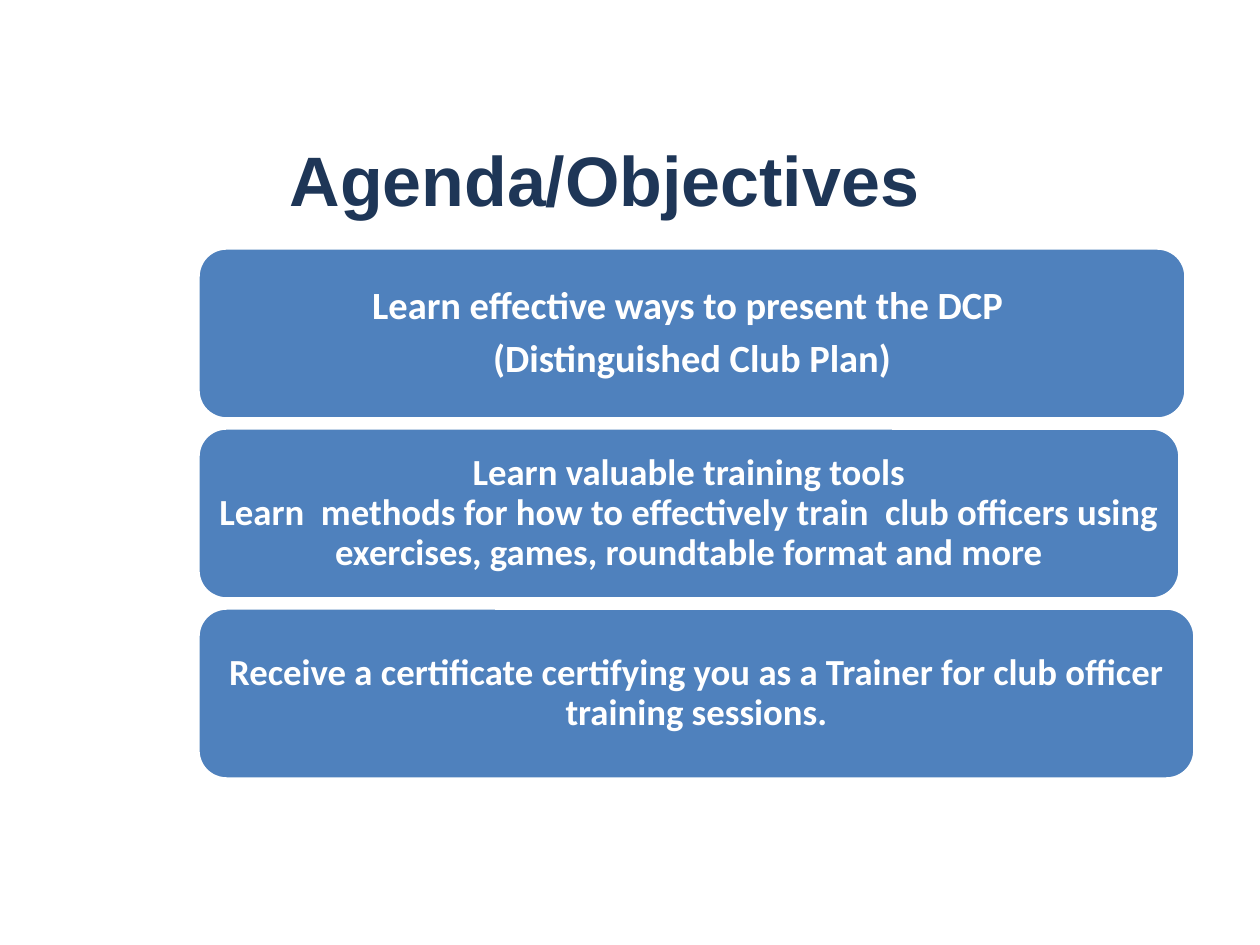
from pptx import Presentation
from pptx import util as u
from pptx.dml.color import RGBColor
from pptx.enum import shapes, text

PX = u.Inches(1) / 126
COLORS = {"title": "1E3657", "card": "4F81BD", "white": "FFFFFF"}

# Card width in px, font size in points, paragraphs (\v is a line break)
OBJECTIVES = [
    (988, 22, ["Learn effective ways to present the DCP ",
               "(Distinguished Club Plan)"]),
    (982, 21, ["Learn valuable training tools\vLearn  methods for how to "
               "effectively train  club officers using exercises, games, "
               "roundtable format and more"]),
    (997, 21, ["Receive a certificate certifying you as a Trainer for "
               "club officer training sessions."]),
]


def px(length):
    return u.Emu(round(length * PX))


def color(name):
    return RGBColor.from_string(COLORS[name])


def set_font(paragraph, name, size, color_name):
    for run in paragraph.runs:
        run.font.name = name
        run.font.size = u.Pt(size)
        run.font.bold = True
        run.font.color.rgb = color(color_name)


def add_title(slide, left, top, width, height):
    title = slide.shapes.title
    title.left, title.top, title.width, title.height = map(
        px, (left, top, width, height))
    frame = title.text_frame
    frame.text = "Agenda/Objectives"
    frame.auto_size = text.MSO_AUTO_SIZE.NONE
    frame.vertical_anchor = text.MSO_ANCHOR.TOP
    frame.margin_top = px(15)
    paragraph = frame.paragraphs[0]
    paragraph.alignment = text.PP_ALIGN.LEFT
    set_font(paragraph, "Arial", 40, "title")


def add_card(slide, left, top, width, height, size, lines):
    card = slide.shapes.add_shape(
        shapes.MSO_SHAPE.ROUNDED_RECTANGLE,
        px(left), px(top), px(width), px(height))
    card.shadow.inherit = False
    card.fill.solid()
    card.fill.fore_color.rgb = color("card")
    card.line.color.rgb = color("white")
    card.line.width = u.Pt(2)

    frame = card.text_frame
    frame.word_wrap = True
    frame.vertical_anchor = text.MSO_ANCHOR.MIDDLE
    frame.margin_left = frame.margin_right = px(11)
    frame.margin_top = frame.margin_bottom = px(5)
    frame.text = "\n".join(lines)
    for paragraph in frame.paragraphs:
        paragraph.alignment = text.PP_ALIGN.CENTER
        paragraph.line_spacing = 0.9
        paragraph.space_after = u.Pt(7)
        set_font(paragraph, "Calibri", size, "white")


def add_objectives(slide, left, top, height, gap):
    for index, (width, size, lines) in enumerate(OBJECTIVES):
        add_card(slide, left, top + index * (height + gap), width, height,
                 size, lines)


def main():
    presentation = Presentation()
    presentation.slide_width = u.Inches(10)
    presentation.slide_height = u.Inches(7.5)
    slide = presentation.slides.add_slide(presentation.slide_layouts[5])
    add_title(slide, 277, 122, 679, 125)
    add_objectives(slide, left=198, top=248, height=171, gap=9)
    presentation.save("out.pptx")


if __name__ == "__main__":
    main()
